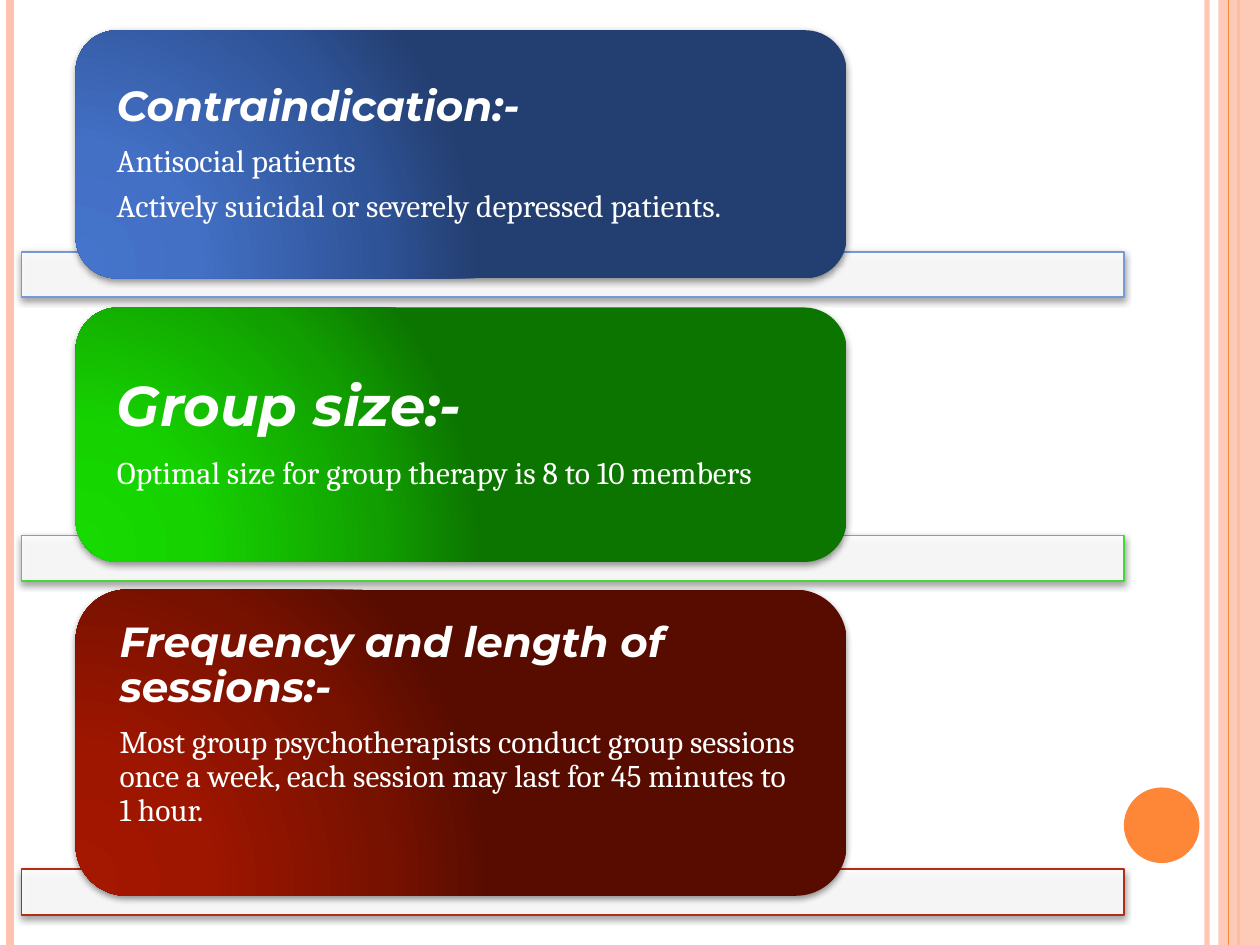
from dataclasses import dataclass

from lxml.etree import SubElement
from pptx import Presentation
from pptx.dml.color import RGBColor
from pptx.enum.shapes import MSO_CONNECTOR, MSO_SHAPE
from pptx.enum.text import MSO_ANCHOR
from pptx.oxml import parse_xml
from pptx.oxml.ns import nsdecls, qn
from pptx.util import Inches, Pt

WHITE = RGBColor(0xFF, 0xFF, 0xFF)
BLACK = RGBColor(0x00, 0x00, 0x00)
PEACH = RGBColor(0xFE, 0xC3, 0xAE)
ORANGE = RGBColor(0xFE, 0x86, 0x37)
BLUE = RGBColor(0x75, 0x98, 0xD9)
GREEN = RGBColor(0x45, 0xD8, 0x34)
RED = RGBColor(0xB3, 0x2C, 0x16)
BLUES = (RGBColor(0x45, 0x74, 0xCC), RGBColor(0x43, 0x70, 0xC5),
         RGBColor(0x2F, 0x53, 0x97), RGBColor(0x23, 0x3E, 0x70))
GREENS = (RGBColor(0x17, 0xDB, 0x00), RGBColor(0x16, 0xD3, 0x00),
          RGBColor(0x11, 0x9E, 0x00), RGBColor(0x0C, 0x75, 0x00))
REDS = (RGBColor(0xA4, 0x17, 0x00), RGBColor(0x9F, 0x16, 0x00),
        RGBColor(0x77, 0x11, 0x00), RGBColor(0x58, 0x0C, 0x00))
STOPS = (0, 30, 75, 100)

WIDE, HIGH = 10, 7.5
CARD_X, CARD_W = 0.6, 6.12
BAR_X, BAR_W, BAR_H = 0.17, 8.75, 0.36
BAR_RISE = 0.21  # overlap of bar and card
CORNER = 0.049  # text margin of a rounded card, as a share of its height


@dataclass
class Rule:
    x: float
    color: RGBColor
    width: float
    alpha: int = 100


@dataclass
class Card:
    top: float
    height: float
    edge: RGBColor
    tones: tuple[RGBColor, ...]
    head: str
    size: int
    body: tuple[str, ...]
    foot: float = 0


BACK = (Rule(9.58, PEACH, 3, 93), Rule(0.08, PEACH, 4.5),
        Rule(9.83, ORANGE, 1.5))
FRONT = Rule(9.75, ORANGE, 0.75)
CARDS = (
    Card(0.24, 1.97, BLUE, BLUES, "Contraindication:-", 24,
         ("Antisocial patients",
          "Actively suicidal or severely depressed patients.")),
    Card(2.44, 2.02, GREEN, GREENS, "Group size:-", 32,
         ("Optimal size for group therapy is 8 to 10 members",)),
    Card(4.68, 2.43, RED, REDS, "Frequency and length of sessions:-", 24,
         ("Most group psychotherapists conduct group sessions once a week, "
          "each session may last for 45 minutes to 1 hour.",), 0.29),
)


def fade(node, alpha: int) -> None:
    """Set the opacity, in percent, of the first colour inside node."""
    tint = next(node.iter(qn("a:srgbClr")))
    SubElement(tint, qn("a:alpha"), val=str(alpha * 1000))


def draw_rule(slide, rule: Rule) -> None:
    x = Inches(rule.x)
    line = slide.shapes.add_connector(
        MSO_CONNECTOR.STRAIGHT, x, 0, x, Inches(HIGH))
    line.line.color.rgb = rule.color
    line.line.width = Pt(rule.width)
    if rule.alpha < 100:
        fade(line.line._ln, rule.alpha)
    SubElement(line._element.spPr, qn("a:effectLst"))


def add_plain(slide, kind, x: float, y: float, w: float, h: float,
              color: RGBColor, alpha: int = 100):
    shape = slide.shapes.add_shape(
        kind, Inches(x), Inches(y), Inches(w), Inches(h))
    shape.shadow.inherit = False
    shape.fill.solid()
    shape.fill.fore_color.rgb = color
    if alpha < 100:
        fade(shape._element.spPr, alpha)
    shape.line.fill.background()
    return shape


def cast_shadow(shape) -> None:
    effects = shape._element.spPr.find(qn("a:effectLst"))
    effects.append(parse_xml(
        f'<a:outerShdw {nsdecls("a")} blurRad="{Pt(4)}" dist="{Pt(1.6)}" '
        f'dir="5400000" rotWithShape="0"><a:srgbClr val="{BLACK}">'
        '<a:alpha val="42000"/></a:srgbClr></a:outerShdw>'))


def shade(shape, tones: tuple[RGBColor, ...]) -> None:
    """Swap the solid fill for a round gradient from the lower left."""
    stops = "".join(
        f'<a:gs pos="{stop * 1000}"><a:srgbClr val="{tone}"/></a:gs>'
        for stop, tone in zip(STOPS, tones))
    props = shape._element.spPr
    props.replace(props.find(qn("a:solidFill")), parse_xml(
        f'<a:gradFill {nsdecls("a")} rotWithShape="1"><a:gsLst>{stops}'
        '</a:gsLst><a:path path="circle"><a:fillToRect l="5000" t="100000" '
        'r="120000" b="10000"/></a:path></a:gradFill>'))


def write(slide, card: Card) -> None:
    pad = card.height * CORNER
    box = slide.shapes.add_textbox(
        Inches(CARD_X + pad), Inches(card.top + pad),
        Inches(CARD_W - 2 * pad), Inches(card.height - 2 * pad))
    frame = box.text_frame
    frame.word_wrap = True
    frame.vertical_anchor = MSO_ANCHOR.MIDDLE
    frame.margin_left = frame.margin_right = Inches(0.23)
    frame.margin_top = 0
    frame.margin_bottom = Inches(card.foot)
    frame.text = "\n".join((card.head, *card.body))
    for index, para in enumerate(frame.paragraphs):
        head = index == 0
        size = card.size if head else 18
        para.line_spacing = 0.9
        para.space_after = Pt(round(size * 0.35, 1))
        para.font.name = "Montserrat" if head else "Cambria"
        para.font.size = Pt(size)
        para.font.bold = para.font.italic = head
        para.font.color.rgb = WHITE


def draw_card(slide, card: Card) -> None:
    bar = add_plain(slide, MSO_SHAPE.RECTANGLE, BAR_X,
                    card.top + card.height - BAR_RISE,
                    BAR_W, BAR_H, WHITE, 90)
    bar.line.color.rgb = card.edge
    bar.line.width = Pt(1)
    cast_shadow(bar)
    panel = add_plain(slide, MSO_SHAPE.ROUNDED_RECTANGLE, CARD_X, card.top,
                      CARD_W, card.height, WHITE)
    shade(panel, card.tones)
    cast_shadow(panel)
    write(slide, card)


def main() -> None:
    deck = Presentation()
    deck.slide_width, deck.slide_height = Inches(WIDE), Inches(HIGH)
    slide = deck.slides.add_slide(deck.slide_layouts[6])
    for rule in BACK:
        draw_rule(slide, rule)
    add_plain(slide, MSO_SHAPE.RECTANGLE, 9.67, 0, 0.33, HIGH, PEACH, 87)
    draw_rule(slide, FRONT)
    add_plain(slide, MSO_SHAPE.OVAL, 8.92, 6.25, 0.6, 0.6, ORANGE)
    for card in CARDS:
        draw_card(slide, card)
    deck.save("out.pptx")


if __name__ == "__main__":
    main()
